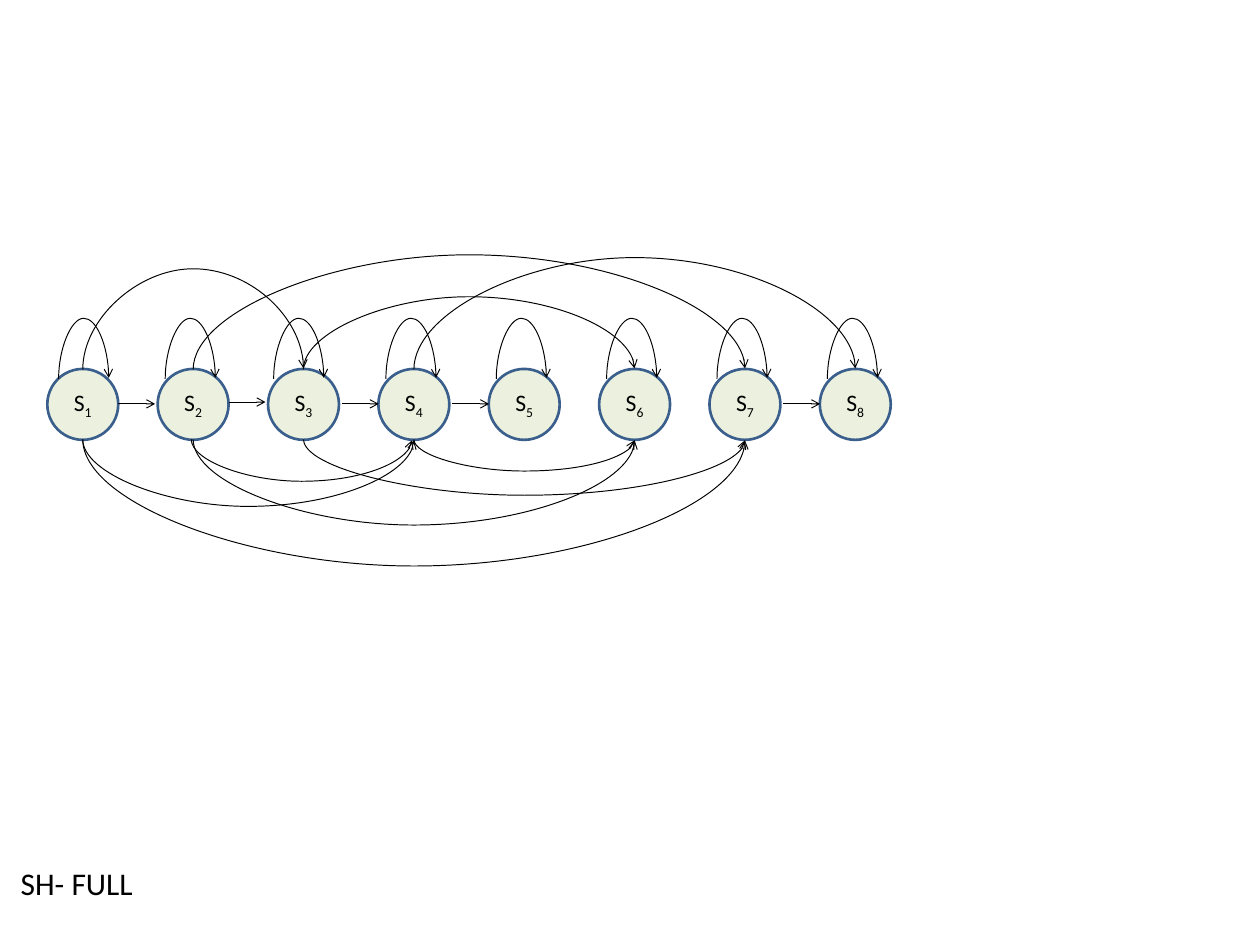
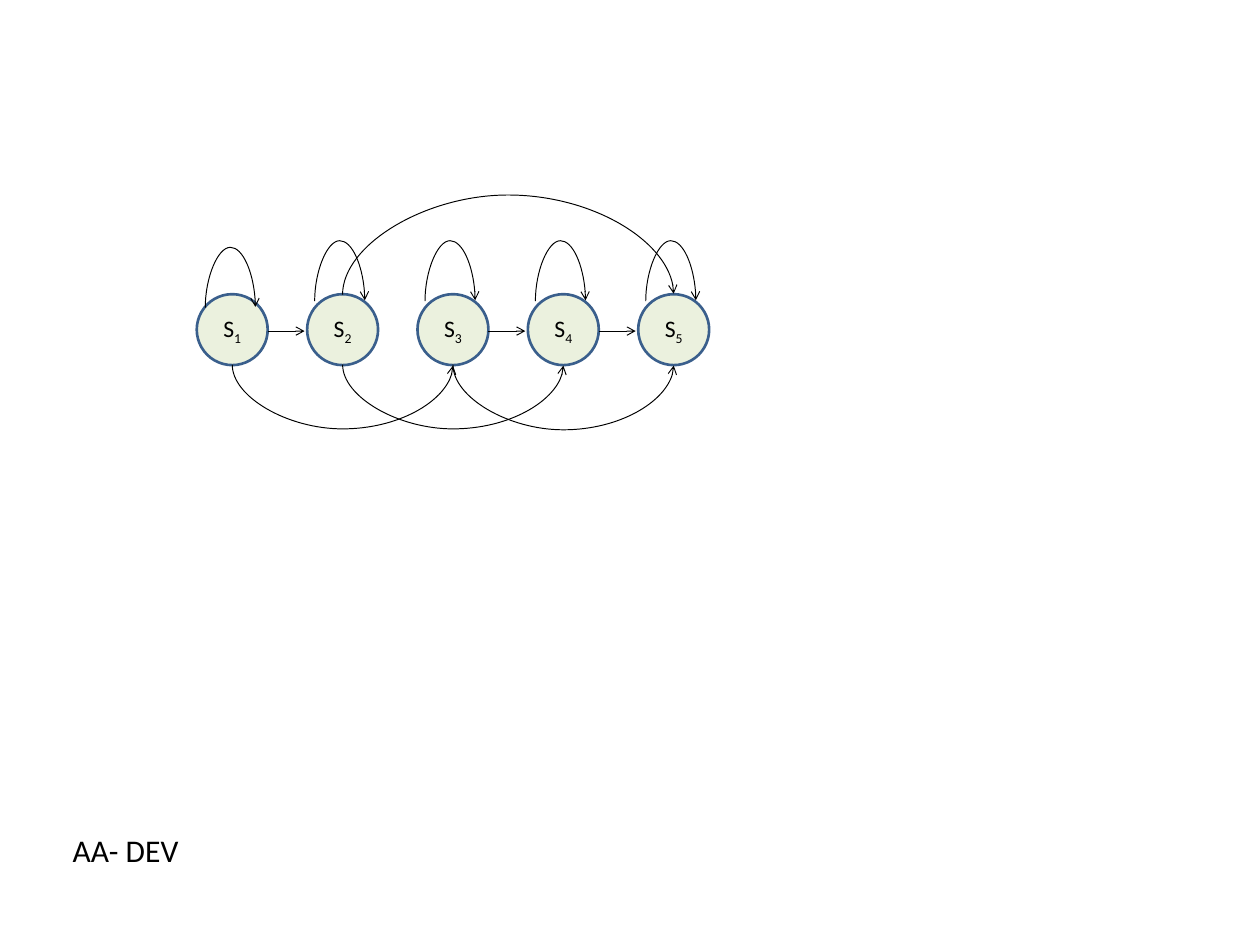
import pptx
import pptx.dml.color
import pptx.enum.shapes
import pptx.enum.text
import pptx.oxml.ns
import pptx.util
from lxml import etree
from pptx.util import Inches

COLORS = {"node": "EBF1DE", "outline": "3A5F8C", "ink": "000000"}
FONT = "Calibri"
NODE_SIZE = 0.75
NODE_PITCH = 7 / 6
ARROW_LENGTH = 0.39
LOOP_WIDTH = 0.53
LOOP_RISE = 0.65
CURVE_THICKNESS = 0.01

# arrows: source state, gap after its circle, drop below the circle's top
# loops: inset from the circle's left and top, one per state
# arcs: source state, target state, rise (negative hangs below), sideways nudge
DIAGRAMS = [
    {
        "caption": "SH- FULL",
        "caption_at": (0.12, 9.08),
        "left": 0.5,
        "top": 3.9,
        "arrows": [(1, 0, 0.37), (2, 0, 0.35), (3, 0.03, 0.37), (4, 0.03, 0.37), (7, 0.03, 0.37)],
        "loops": [(0.12, 0.1), (0.08, 0.1), (0.06, 0.1)] + [(0.08, 0.1)] * 5,
        "arcs": [
            (1, 3, 1.08, 0), (1, 4, -0.72, 0), (1, 7, -1.36, 0),
            (2, 4, -0.45, -0.02), (2, 7, 1.23, 0), (2, 6, -0.92, 0),
            (3, 7, -0.6, 0), (3, 6, 0.78, 0),
            (4, 6, -0.34, 0), (4, 8, 1.2, 0),
        ],
    },
    {
        "caption": "AA- DEV",
        "caption_at": (0.67, 8.74),
        "left": 2.08,
        "top": 3.11,
        "arrows": [(1, 0, 0.39), (3, 0, 0.39), (4, 0, 0.39)],
        "loops": [(0.09, 0.14)] + [(0.08, 0.07)] * 4,
        "arcs": [
            (1, 3, -0.69, 0), (2, 4, -0.69, 0),
            (2, 5, 1.07, 0), (3, 5, -0.7, 0),
        ],
    },
]


def add_arrow(slide, kind, start_x, start_y, end_x, end_y):
    connector = slide.shapes.add_connector(
        kind, Inches(start_x), Inches(start_y), Inches(end_x), Inches(end_y)
    )
    connector.line.color.rgb = pptx.dml.color.RGBColor.from_string(COLORS["ink"])
    connector.line.width = pptx.util.Pt(0.75)
    tail = etree.SubElement(connector.line._get_or_add_ln(), pptx.oxml.ns.qn("a:tailEnd"))
    tail.set("type", "arrow")
    etree.SubElement(connector._element.spPr, pptx.oxml.ns.qn("a:effectLst"))
    return connector


def add_curve(slide, start_x, end_x, y, rise):
    """Draw a curved arrow from left to right; a negative rise bends it downwards.

    The connector is a thin upright box turned by a quarter, so that its
    adjustment, a multiple of its thickness, sets how far it bends.
    """
    middle_x = (start_x + end_x) / 2
    half_span = (end_x - start_x) / 2
    half_thickness = CURVE_THICKNESS / 2
    connector = add_arrow(
        slide, pptx.enum.shapes.MSO_CONNECTOR.CURVE,
        middle_x - half_thickness, y - half_span,
        middle_x + half_thickness, y + half_span,
    )
    properties = connector._element.spPr
    transform = properties.find(pptx.oxml.ns.qn("a:xfrm"))
    transform.set("rot", str((90 if rise > 0 else 270) * 60000))
    transform.set("flipH", "1")
    if rise > 0:
        transform.set("flipV", "1")
    adjustments = properties.find(".//" + pptx.oxml.ns.qn("a:avLst"))
    guide = etree.SubElement(adjustments, pptx.oxml.ns.qn("a:gd"))
    guide.set("name", "adj1")
    guide.set("fmla", f"val {round(abs(rise) / CURVE_THICKNESS * 100000)}")


presentation = pptx.Presentation()
presentation.slide_width = Inches(13.32)
presentation.slide_height = Inches(9.99)

for diagram in DIAGRAMS:
    slide = presentation.slides.add_slide(presentation.slide_layouts[6])
    top = diagram["top"]
    node_lefts = [diagram["left"] + NODE_PITCH * i for i in range(len(diagram["loops"]))]
    centers = [left + NODE_SIZE / 2 for left in node_lefts]

    for number, left in enumerate(node_lefts, start=1):
        node = slide.shapes.add_shape(
            pptx.enum.shapes.MSO_SHAPE.OVAL,
            Inches(left), Inches(top), Inches(NODE_SIZE), Inches(NODE_SIZE),
        )
        node.shadow.inherit = False
        node.fill.solid()
        node.fill.fore_color.rgb = pptx.dml.color.RGBColor.from_string(COLORS["node"])
        node.line.color.rgb = pptx.dml.color.RGBColor.from_string(COLORS["outline"])
        node.line.width = pptx.util.Pt(2)
        node.text_frame.vertical_anchor = pptx.enum.text.MSO_ANCHOR.MIDDLE
        paragraph = node.text_frame.paragraphs[0]
        paragraph.alignment = pptx.enum.text.PP_ALIGN.CENTER
        paragraph.text = "S"
        paragraph.add_run().text = str(number)
        for run in paragraph.runs:
            run.font.name = FONT
            run.font.size = pptx.util.Pt(18)
            run.font.color.rgb = pptx.dml.color.RGBColor.from_string(COLORS["ink"])
        paragraph.runs[1].font._element.set("baseline", "-25000")

    for source, gap, drop in diagram["arrows"]:
        start_x = node_lefts[source - 1] + NODE_SIZE + gap
        add_arrow(
            slide, pptx.enum.shapes.MSO_CONNECTOR.STRAIGHT,
            start_x, top + drop, start_x + ARROW_LENGTH, top + drop,
        )

    for left, (inset_x, inset_y) in zip(node_lefts, diagram["loops"]):
        start_x = left + inset_x
        add_curve(slide, start_x, start_x + LOOP_WIDTH, top + inset_y, LOOP_RISE)

    for source, target, rise, nudge in diagram["arcs"]:
        y = top if rise > 0 else top + NODE_SIZE
        add_curve(slide, centers[source - 1] + nudge, centers[target - 1] + nudge, y, rise)

    caption_left, caption_top = diagram["caption_at"]
    caption = slide.shapes.add_textbox(
        Inches(caption_left), Inches(caption_top), Inches(1.5), Inches(0.5)
    )
    caption.text_frame.word_wrap = True
    caption.text_frame.auto_size = pptx.enum.text.MSO_AUTO_SIZE.SHAPE_TO_FIT_TEXT
    caption.text_frame.text = diagram["caption"]
    font = caption.text_frame.paragraphs[0].runs[0].font
    font.name = FONT
    font.size = pptx.util.Pt(24)
    font.color.rgb = pptx.dml.color.RGBColor.from_string(COLORS["ink"])

presentation.save("out.pptx")
